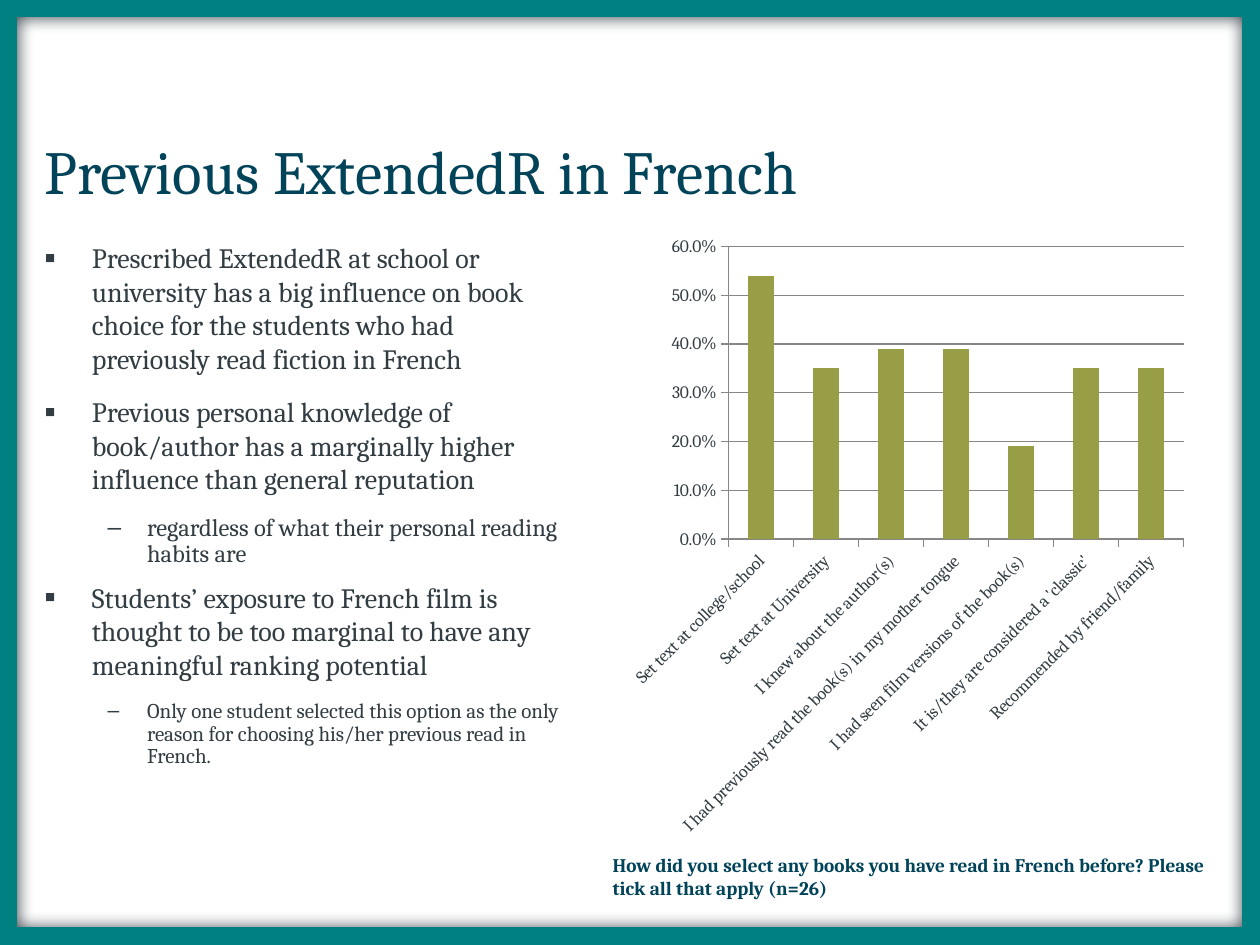
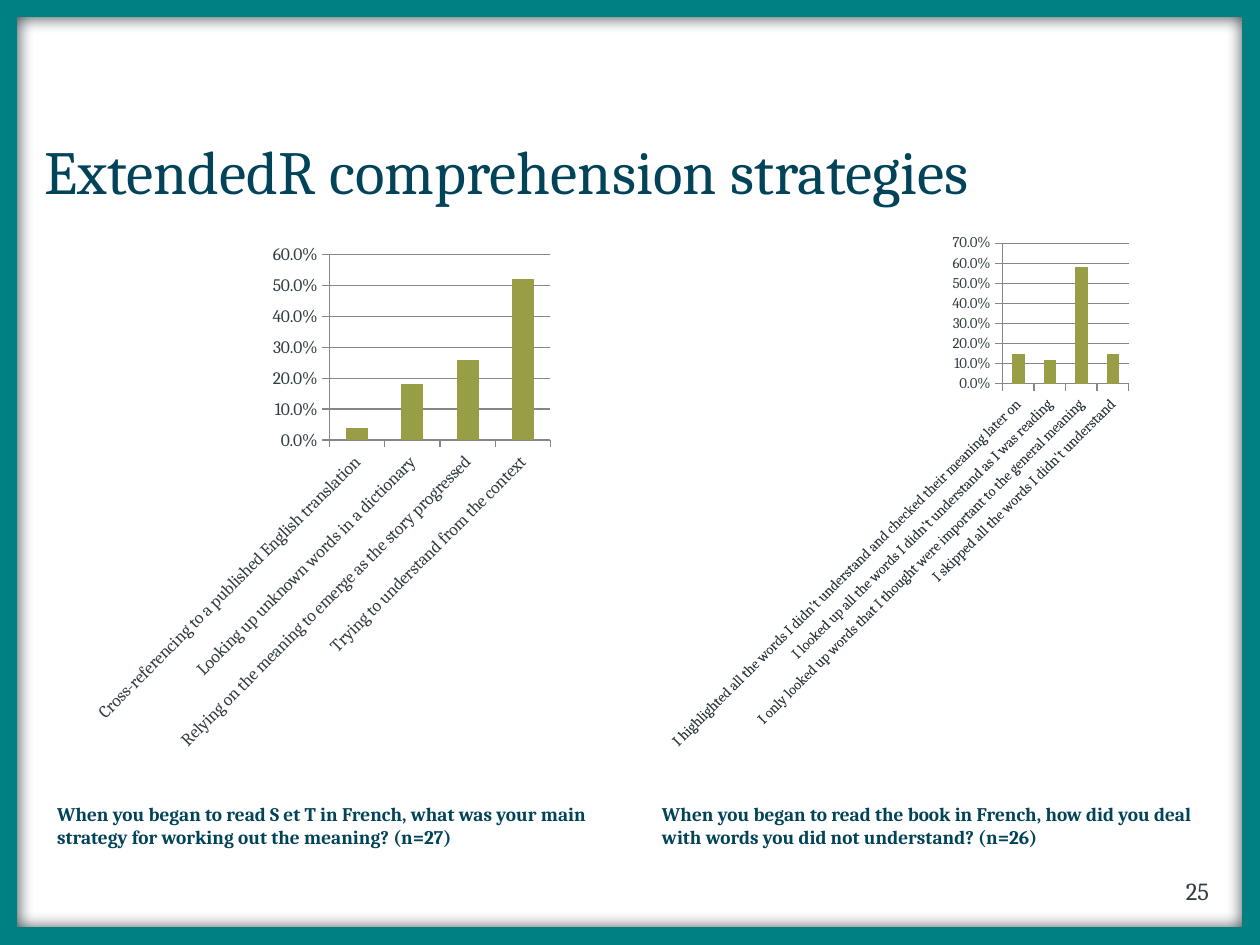
from lxml import etree
from pptx import Presentation
from pptx.chart.data import CategoryChartData
from pptx.dml.color import RGBColor
from pptx.enum import chart as ch, shapes, text
from pptx.oxml import parse_xml
from pptx.oxml.ns import nsdecls, qn
from pptx.util import Pt

NAVY = RGBColor(0x01, 0x43, 0x59)
SLATE = RGBColor(0x32, 0x3D, 0x43)
TEAL = RGBColor(0x00, 0x80, 0x80)
OLIVE = RGBColor(0x97, 0x9E, 0x45)
GREY = RGBColor(0x86, 0x86, 0x86)
FONT = "Cambria"
SLIDE_W, SLIDE_H = 720, 540
LEFT = 25.5

# Per level: bullet, its font, left margin, hanging indent, line spacing, space after
LEVELS = [("▪", FONT, 27, 27, 1.0, 11.2), ("–", "Arial", 58.5, 22.5, 0.9, 7)]

POINTS = [
    (0, 16, "Prescribed ExtendedR at school or university has a big influence on "
            "book choice for the students who had previously read fiction in French"),
    (0, 16, "Previous personal knowledge of book/author has a marginally higher "
            "influence than general reputation"),
    (1, 14, "regardless of what their personal reading habits are"),
    (0, 16, "Students’ exposure to French film is thought to be too marginal to "
            "have any meaningful ranking potential"),
    (1, 12, "Only one student selected this option as the only reason for choosing "
            "his/her previous read in French."),
]
BOOK_CHOICE = {
    "Set text at college/school": 0.54,
    "Set text at University": 0.35,
    "I knew about the author(s)": 0.39,
    "I had previously read the book(s) in my mother tongue": 0.39,
    "I had seen film versions of the book(s)": 0.19,
    "It is/they are considered a 'classic'": 0.35,
    "Recommended by friend/family": 0.35,
}
MAIN_STRATEGY = {
    "Cross-referencing to a published English translation": 0.04,
    "Looking up unknown words in a dictionary": 0.18,
    "Relying on the meaning to emerge as the story progressed": 0.26,
    "Trying to understand from the context": 0.52,
}
UNKNOWN_WORDS = {
    "I highlighted all the words I didn't understand and checked their meaning later on": 0.15,
    "I looked up all the words I didn't understand as I was reading": 0.12,
    "I only looked up words that I thought were important to the general meaning": 0.58,
    "I skipped all the words I didn't understand": 0.15,
}


def style_font(font, size, color, bold=False):
    font.name, font.size, font.bold = FONT, Pt(size), bold
    font.color.rgb = color


def add_run(p, wording, size, color, bold=False):
    r = p.add_run()
    r.text = wording
    style_font(r.font, size, color, bold)


def place(sp, box):
    sp.left, sp.top, sp.width, sp.height = (Pt(v) for v in box)


def set_frame(tf, left=7.2, right=7.2, bottom=3.6):
    tf.word_wrap = True
    tf.auto_size = text.MSO_AUTO_SIZE.NONE
    tf.margin_left, tf.margin_right = Pt(left), Pt(right)
    tf.margin_top, tf.margin_bottom = Pt(3.6), Pt(bottom)


def add_slide(prs, layout, title):
    s = prs.slides.add_slide(prs.slide_layouts[layout])
    place(s.shapes.title, (LEFT, 71.6, 668.9, 51.1))
    tf = s.shapes.title.text_frame
    set_frame(tf, left=0)
    tf.vertical_anchor = text.MSO_ANCHOR.MIDDLE
    p = tf.paragraphs[0]
    p.alignment = text.PP_ALIGN.LEFT
    add_run(p, title, 35, NAVY)
    return s


def fill_body(sp, box, points):
    place(sp, box)
    tf = sp.text_frame
    set_frame(tf, left=0)
    for i, (level, size, wording) in enumerate(points):
        p = tf.add_paragraph() if i else tf.paragraphs[0]
        bullet, bullet_font, margin, hang, spacing, after = LEVELS[level]
        p.level = level
        p.line_spacing, p.space_before, p.space_after = spacing, Pt(0), Pt(after)
        pPr = p._p.get_or_add_pPr()
        pPr.set("marL", str(Pt(margin)))
        pPr.set("indent", str(-Pt(hang)))
        etree.SubElement(pPr, qn("a:buFont")).set("typeface", bullet_font)
        etree.SubElement(pPr, qn("a:buChar")).set("char", bullet)
        add_run(p, wording, size, SLATE)


def add_text(s, box, wording, size, color, bold=False, right=7.2, bottom=0,
             align=text.PP_ALIGN.LEFT):
    sp = s.shapes.add_textbox(*(Pt(v) for v in box))
    set_frame(sp.text_frame, right=right, bottom=bottom)
    p = sp.text_frame.paragraphs[0]
    p.alignment = align
    add_run(p, wording, size, color, bold)


def add_caption(s, box, wording):
    add_text(s, box, wording, 11, NAVY, bold=True)


def fix_plot(chart, box, plot_box):
    """Pin the inner plot area, given in slide coordinates."""
    x, y, w, h = box
    px, py, pw, ph = plot_box
    parts = {"x": (px - x) / w, "y": (py - y) / h, "w": pw / w, "h": ph / h}
    modes = '<c:xMode val="edge"/><c:yMode val="edge"/>'
    values = "".join(f'<c:{k} val="{v:.4f}"/>' for k, v in parts.items())
    layout = parse_xml(f'<c:layout {nsdecls("c")}><c:manualLayout>'
                       f'<c:layoutTarget val="inner"/>{modes}{values}'
                       '</c:manualLayout></c:layout>')
    area = chart._chartSpace.chart.plotArea
    for old in area.findall(qn("c:layout")):
        area.remove(old)
    area.insert(0, layout)


def add_columns(s, box, plot_box, answers, top, size=10):
    data = CategoryChartData(number_format="0.0%")
    data.categories = list(answers)
    data.add_series("Series 1", list(answers.values()))
    chart = s.shapes.add_chart(ch.XL_CHART_TYPE.COLUMN_CLUSTERED,
                               *(Pt(v) for v in box), data).chart
    chart.has_legend = chart.has_title = False
    style_font(chart.font, size, SLATE)
    plot = chart.plots[0]
    plot.gap_width, plot.vary_by_categories = 150, False
    fill = plot.series[0].format.fill
    fill.solid()
    fill.fore_color.rgb = OLIVE
    # Axes
    cat, val = chart.category_axis, chart.value_axis
    for axis in (cat, val):
        axis.major_tick_mark = ch.XL_TICK_MARK.OUTSIDE
        axis.minor_tick_mark = ch.XL_TICK_MARK.NONE
        axis.format.line.color.rgb = GREY
        style_font(axis.tick_labels.font, size, SLATE)
    cat._element.find(qn("c:txPr")).find(qn("a:bodyPr")).set("rot", "-2700000")
    val.minimum_scale, val.maximum_scale, val.major_unit = 0, top, 0.1
    val.has_major_gridlines = True
    val.major_gridlines.format.line.color.rgb = GREY
    val.tick_labels.number_format = "0.0%"
    val.tick_labels.number_format_is_linked = False
    fix_plot(chart, box, plot_box)


def add_frame(s):
    sp = s.shapes.add_shape(shapes.MSO_SHAPE.RECTANGLE, 0, 0, Pt(SLIDE_W), Pt(SLIDE_H))
    sp.fill.background()
    sp.line.color.rgb = TEAL
    sp.line.width = Pt(20)
    sp.shadow.inherit = False
    # Soft shadow along the inner edge
    sp._element.spPr.find(qn("a:effectLst")).append(parse_xml(
        f'<a:outerShdw {nsdecls("a")} blurRad="{Pt(10)}" dist="0" dir="0">'
        f'<a:srgbClr val="{SLATE}"/></a:outerShdw>'))


def main():
    prs = Presentation()
    prs.slide_width, prs.slide_height = Pt(SLIDE_W), Pt(SLIDE_H)

    # Previous reading
    s = add_slide(prs, 1, "Previous ExtendedR in French")
    fill_body(s.placeholders[1], (LEFT, 133.9, 306, 356.4), POINTS)
    add_columns(s, (354.2, 128.2, 328.3, 356.4), (416.4, 140.9, 260, 167.2),
                BOOK_CHOICE, 0.6)
    add_caption(s, (343, 483.8, 370.1, 30.2),
                "How did you select any books you have read in French before? "
                "Please tick all that apply (n=26)")
    add_frame(s)

    # Comprehension strategies
    s = add_slide(prs, 5, "ExtendedR comprehension strategies")
    add_text(s, (523.1, 496.8, 167.8, 37.4), "25", 14, SLATE, right=0, bottom=3.6,
             align=text.PP_ALIGN.RIGHT)
    add_columns(s, (48.2, 133.9, 272.2, 300.2), (188.4, 145.5, 126.2, 106),
                MAIN_STRATEGY, 0.6)
    add_columns(s, (382.3, 133.9, 266.4, 294.5), (573, 139.1, 72, 80.6),
                UNKNOWN_WORDS, 0.7, size=8.5)
    add_caption(s, (371.2, 455, 334.8, 44.6),
                "When you began to read the book in French, how did you deal with "
                "words you did not understand? (n=26)")
    add_caption(s, (LEFT, 455, 334.8, 44.6),
                "When you began to read S et T in French, what was your main "
                "strategy for working out the meaning? (n=27)")
    add_frame(s)

    prs.save("out.pptx")


if __name__ == "__main__":
    main()
